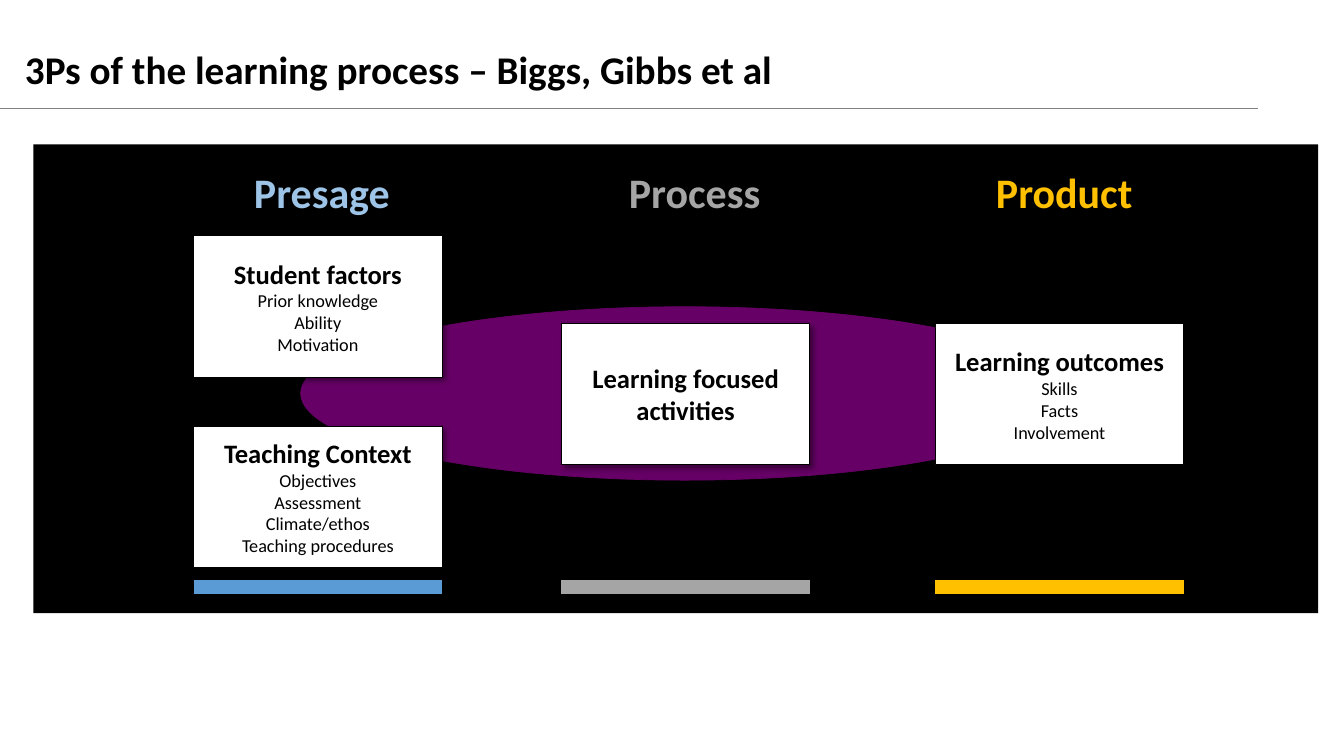
from lxml import etree
from pptx import Presentation
from pptx.dml.color import RGBColor
from pptx.enum.shapes import MSO_CONNECTOR, MSO_SHAPE
from pptx.enum.text import MSO_ANCHOR, PP_ALIGN
from pptx.oxml import parse_xml
from pptx.oxml.ns import nsdecls, qn
from pptx.util import Cm, Pt

RECT, OVAL = MSO_SHAPE.RECTANGLE, MSO_SHAPE.OVAL
STRAIGHT = MSO_CONNECTOR.STRAIGHT
MIDDLE, TOP = MSO_ANCHOR.MIDDLE, MSO_ANCHOR.TOP
CENTER, LEFT = PP_ALIGN.CENTER, PP_ALIGN.LEFT

TITLE = "3Ps of the learning process – Biggs, Gibbs et al"

# Lengths in cm; each box is (top, heading, items)
STAGES = [
    {"name": "Presage", "left": 4.88, "name_box": (6.12, 4.06),
     "text": "9DC3E6", "bar": "5B9BD5",
     "boxes": [
         (5.94, "Student factors", ["Prior knowledge", "Ability", "Motivation"]),
         (10.74, "Teaching Context", ["Objectives", "Assessment",
                                      "Climate/ethos", "Teaching procedures"]),
     ]},
    {"name": "Process", "left": 14.15, "name_box": (15.57, 3.94),
     "text": "A5A5A5", "bar": "A5A5A5",
     "boxes": [(8.15, "Learning focused activities", [])]},
    {"name": "Product", "left": 23.57, "name_box": (24.82, 4.06),
     "text": "FFC000", "bar": "FFC000",
     "boxes": [(8.15, "Learning outcomes", ["Skills", "Facts", "Involvement"])]},
]
BOX_W, BOX_H = 6.26, 3.56
NAME_TOP, NAME_H = 4.04, 1.57
BAR_Y = 14.78

THEME = {
    "font": "Calibri", "ink": "000000", "panel": "000000", "paper": "FFFFFF",
    "oval": "660066", "rule": "808080",
    "title": 28, "stage": 30, "heading": 19, "item": 13,
}


def rgb(value):
    return RGBColor.from_string(value)


def write(tf, lines, align=LEFT, anchor=TOP):
    """Fill a text frame with (text, size, bold, colour) paragraphs."""
    tf.vertical_anchor = anchor
    for i, (text, size, bold, color) in enumerate(lines):
        p = tf.add_paragraph() if i else tf.paragraphs[0]
        p.text = text
        p.alignment = align
        font = p.runs[0].font
        font.name, font.size, font.bold = THEME["font"], Pt(size), bold
        font.color.rgb = rgb(color)


def set_insets(tf):
    tf.margin_left = tf.margin_right = Cm(0.28)
    tf.margin_top = tf.margin_bottom = Cm(0.15)


def add_text(s, box, line, wrap):
    sp = s.shapes.add_textbox(*map(Cm, box))
    sp.text_frame.word_wrap = wrap
    write(sp.text_frame, [line])
    return sp.text_frame


def add_shape(s, kind, box, fill, line=None):
    sp = s.shapes.add_shape(kind, *map(Cm, box))
    sp.shadow.inherit = False
    sp.fill.solid()
    sp.fill.fore_color.rgb = rgb(fill)
    if line:
        sp.line.color.rgb = rgb(line)
        sp.line.width = Pt(0.5)
    else:
        sp.line.fill.background()
    return sp


def add_line(s, left, right, y, color, width):
    cn = s.shapes.add_connector(STRAIGHT, Cm(left), Cm(y), Cm(right), Cm(y))
    cn.line.color.rgb = rgb(color)
    cn.line.width = Pt(width)
    etree.SubElement(cn._element.spPr, qn("a:effectLst"))


def add_shadow(sp):
    effects = sp._element.spPr.find(qn("a:effectLst"))
    effects.append(parse_xml(
        f'<a:outerShdw {nsdecls("a")} blurRad="{Pt(4)}" dist="{Pt(3)}" '
        'dir="2700000" algn="tl" rotWithShape="0"><a:srgbClr val="000000">'
        '<a:alpha val="43000"/></a:srgbClr></a:outerShdw>'))


def add_box(s, left, top, heading, items):
    sp = add_shape(s, RECT, (left, top, BOX_W, BOX_H), THEME["paper"], THEME["ink"])
    add_shadow(sp)
    tf = sp.text_frame
    tf.word_wrap = True
    set_insets(tf)
    lines = [(heading, THEME["heading"], True, THEME["ink"])]
    lines += [(item, THEME["item"], False, THEME["ink"]) for item in items]
    write(tf, lines, CENTER, MIDDLE)


def add_stage(s, stage):
    name_left, name_w = stage["name_box"]
    tf = add_text(s, (name_left, NAME_TOP, name_w, NAME_H),
                  (stage["name"], THEME["stage"], True, stage["text"]), False)
    set_insets(tf)
    left = stage["left"]
    for top, heading, items in stage["boxes"]:
        add_box(s, left, top, heading, items)
    add_line(s, left, left + BOX_W, BAR_Y, stage["bar"], 10)


def main():
    prs = Presentation()
    prs.slide_width, prs.slide_height = Cm(33.87), Cm(19.05)
    s = prs.slides.add_slide(prs.slide_layouts[6])

    add_line(s, 0, 31.7, 2.74, THEME["rule"], 0.82)
    tf = add_text(s, (0.38, 1.14, 30.99, 1.12),
                  (TITLE, THEME["title"], True, THEME["ink"]), True)
    tf.paragraphs[0].line_spacing = 0.9

    add_shape(s, RECT, (0.84, 3.64, 32.38, 11.81), THEME["panel"])
    add_shape(s, OVAL, (7.58, 7.73, 19.35, 4.37), THEME["oval"], THEME["oval"])
    for stage in STAGES:
        add_stage(s, stage)
    prs.save("out.pptx")


if __name__ == "__main__":
    main()
